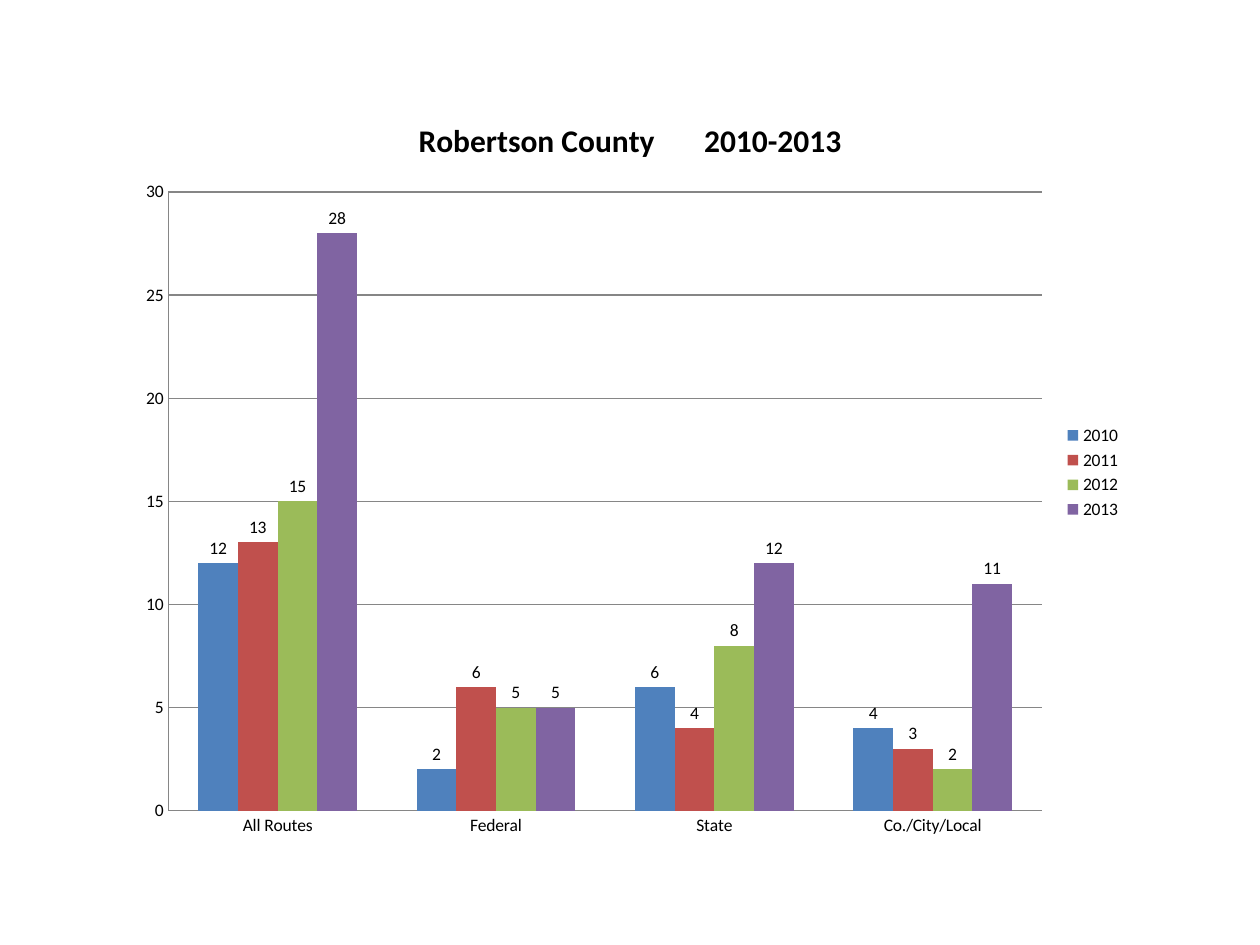
"""Build a slide with a clustered column chart of Robertson County counts by route type."""
from pptx import Presentation
from pptx.chart.data import CategoryChartData
from pptx.dml.color import RGBColor
from pptx.enum.chart import XL_CHART_TYPE as ChartType
from pptx.enum.chart import XL_LABEL_POSITION as LabelPosition
from pptx.enum.chart import XL_LEGEND_POSITION as LegendPosition
from pptx.enum.chart import XL_TICK_MARK as TickMark
from pptx.util import Pt

SLIDE = (720, 540)
MARGINS = (72, 54)
TITLE = ("Robertson County", " ", "2010-2013")
TITLE_GAP = 24
ROUTES = ("All Routes", "Federal", "State", "Co./City/Local")
YEARS = (
    ("2010", (12, 2, 6, 4), "4F81BD"),
    ("2011", (13, 6, 4, 3), "C0504D"),
    ("2012", (15, 5, 8, 2), "9BBB59"),
    ("2013", (28, 5, 12, 11), "8064A2"),
)
BLACK, GRID = "000000", "868686"
BODY_FONT = {"name": "Calibri", "size": Pt(10), "bold": False}
TITLE_FONT = {"name": "Calibri", "size": Pt(18), "bold": True}
SCALE = {"minimum_scale": 0, "maximum_scale": 30, "major_unit": 5,
         "has_major_gridlines": True}
TICKS = {"major_tick_mark": TickMark.NONE, "minor_tick_mark": TickMark.NONE}
LEGEND = {"position": LegendPosition.RIGHT, "include_in_layout": False}
COLUMNS = {"gap_width": 150, "overlap": 0, "vary_by_categories": False,
           "has_data_labels": True}
LABELS = {"show_value": True, "position": LabelPosition.OUTSIDE_END}


def apply(target, values):
    for name, value in values.items():
        setattr(target, name, value)


def paint(color_format, color):
    color_format.rgb = RGBColor.from_string(color)


def style_font(font, values):
    apply(font, values)
    paint(font.color, BLACK)


def style_line(line):
    line.width = Pt(0.75)
    paint(line.color, GRID)


def add_title(chart):
    heading = chart.chart_title.text_frame.paragraphs[0]
    for part in TITLE:
        words = heading.add_run()
        words.text = part
        style_font(words.font, TITLE_FONT)
        if part.isspace():
            words._r.get_or_add_rPr().set("spc", str(TITLE_GAP * 100))


def add_routes_chart(slide):
    counts = CategoryChartData()
    counts.categories = ROUTES
    for year, values, _ in YEARS:
        counts.add_series(year, values)
    left, top = MARGINS
    width, height = (side - 2 * gap for side, gap in zip(SLIDE, MARGINS))
    chart = slide.shapes.add_chart(
        ChartType.COLUMN_CLUSTERED, Pt(left), Pt(top), Pt(width), Pt(height), counts
    ).chart
    style_font(chart.font, BODY_FONT)
    add_title(chart)

    chart.has_legend = True
    apply(chart.legend, LEGEND)
    apply(chart.value_axis, SCALE)
    for axis in (chart.category_axis, chart.value_axis):
        apply(axis, TICKS)
        style_line(axis.format.line)
    style_line(chart.value_axis.major_gridlines.format.line)

    columns = chart.plots[0]
    apply(columns, COLUMNS)
    apply(columns.data_labels, LABELS)
    for series, (_, _, color) in zip(columns.series, YEARS):
        series.format.fill.solid()
        paint(series.format.fill.fore_color, color)


def main():
    deck = Presentation()
    deck.slide_width, deck.slide_height = map(Pt, SLIDE)
    add_routes_chart(deck.slides.add_slide(deck.slide_layouts[6]))
    deck.save("out.pptx")


if __name__ == "__main__":
    main()
